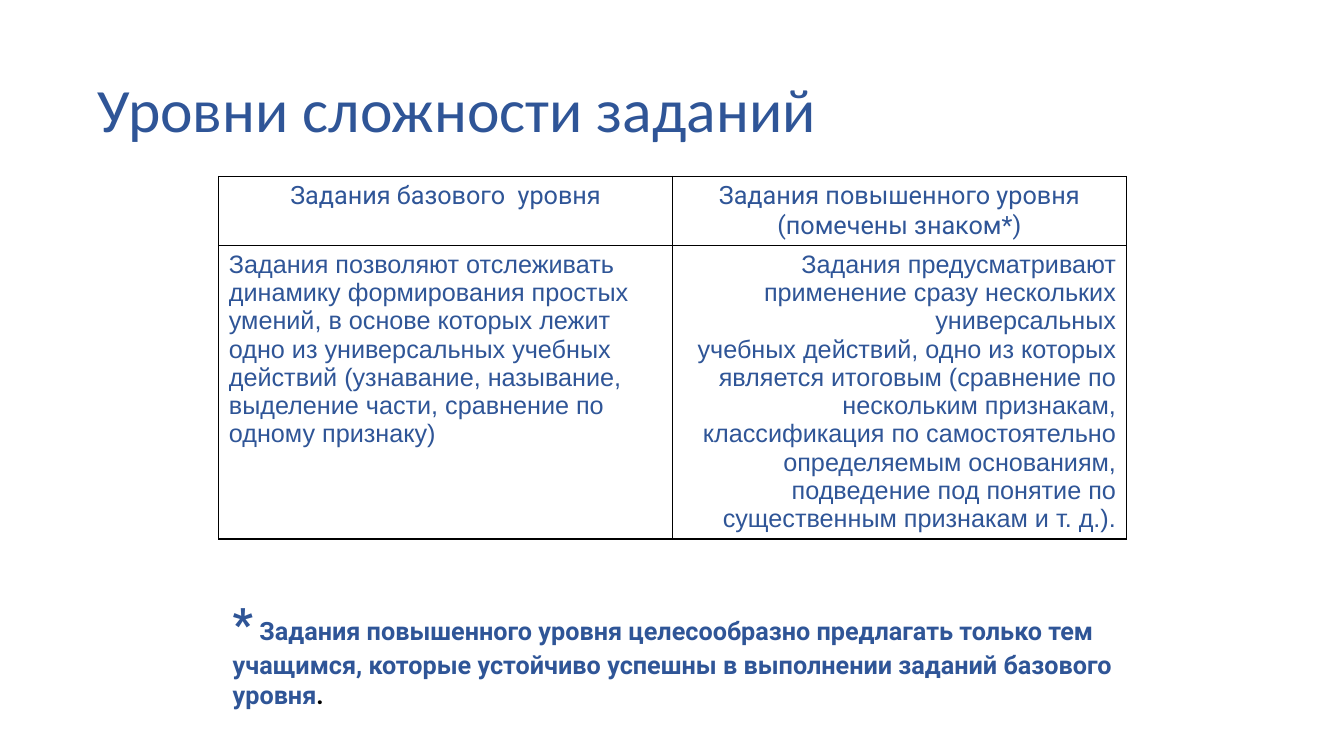
"""Build the slide on difficulty levels of tasks."""
from lxml import etree
from pptx import Presentation
from pptx import util as u
from pptx.dml.color import RGBColor
from pptx.enum import shapes, text
from pptx.oxml.ns import qn

PX = 9144
COLORS = {"blue": "2F5597", "black": "000000", "white": "FFFFFF"}
ALIGN = text.PP_ALIGN


def add_span(para, words, color="blue", **formats):
    span = para.add_run()
    span.text = words
    span.font.color.rgb = RGBColor.from_string(COLORS[color])
    for name, value in formats.items():
        setattr(span.font, name, value)


def paint(item):
    item.fill.solid()
    item.fill.fore_color.rgb = RGBColor.from_string(COLORS["white"])


deck = Presentation()
deck.slide_width, deck.slide_height = 1333 * PX, 750 * PX
page = deck.slides.add_slide(deck.slide_layouts[5])

title = page.shapes.title
title.left, title.top, title.width, title.height = (n * PX for n in (92, 25, 1150, 174))
frame = title.text_frame
frame_formats = {
    "margin_left": 5 * PX, "margin_right": 5 * PX,
    "margin_top": 5 * PX, "margin_bottom": 5 * PX,
    "vertical_anchor": text.MSO_ANCHOR.MIDDLE,
    "auto_size": text.MSO_AUTO_SIZE.NONE, "word_wrap": True,
}
for name, value in frame_formats.items():
    setattr(frame, name, value)
para = frame.paragraphs[0]
para.alignment, para.line_spacing = ALIGN.LEFT, 0.9
add_span(para, "Уровни сложности заданий", size=u.Pt(44), name="Calibri")

rows = [
    (68, "Roboto", [
        (ALIGN.CENTER, ["Задания базового  уровня"]),
        (ALIGN.CENTER, ["Задания повышенного уровня", "(помечены знаком*)"]),
    ]),
    (291, "Arial", [
        (ALIGN.LEFT, [
            "Задания позволяют отслеживать динамику формирования простых умений, "
            "в основе которых лежит одно из универсальных учебных действий "
            "(узнавание, называние, выделение части, сравнение по одному признаку)",
        ]),
        (ALIGN.RIGHT, [
            "Задания предусматривают применение сразу нескольких универсальных",
            "учебных действий, одно из которых является итоговым (сравнение по "
            "нескольким признакам, классификация по самостоятельно определяемым "
            "основаниям, подведение под понятие по существенным признакам и т. д.).",
        ]),
    ]),
]
table = page.shapes.add_table(2, 2, 217 * PX, 175 * PX, 900 * PX, 359 * PX).table
for row, (height, font, cells) in enumerate(rows):
    table.rows[row].height = height * PX
    for column, (alignment, lines) in enumerate(cells):
        cell = table.cell(row, column)
        for number, line in enumerate(lines):
            frame = cell.text_frame
            para = frame.add_paragraph() if number else frame.paragraphs[0]
            para.alignment = alignment
            add_span(para, line, size=u.Pt(18), name=font, bold=False)
        properties = cell._tc.get_or_add_tcPr()
        for side in ("lnL", "lnR", "lnT", "lnB"):
            border = etree.SubElement(properties, qn(f"a:{side}"), w=str(u.Pt(1)))
            fill = etree.SubElement(border, qn("a:solidFill"))
            etree.SubElement(fill, qn("a:srgbClr"), val=COLORS["black"])
        paint(cell)

note = page.shapes.add_shape(
    shapes.MSO_SHAPE.RECTANGLE, 221 * PX, 586 * PX, 906 * PX, 125 * PX)
note.shadow.inherit = False
note.line.fill.background()
paint(note)
note.text_frame.word_wrap = True
note.text_frame.vertical_anchor = text.MSO_ANCHOR.TOP
para = note.text_frame.paragraphs[0]
para.alignment = ALIGN.LEFT
spans = [
    ("*", "blue", 32),
    (" ", "black", 18),
    ("Задания повышенного уровня целесообразно предлагать только тем учащимся, "
     "которые устойчиво успешны в выполнении заданий базового уровня", "blue", 18),
    (".", "black", 18),
]
for words, color, size in spans:
    add_span(para, words, color, size=u.Pt(size), name="Roboto", bold=True)

deck.save("out.pptx")
